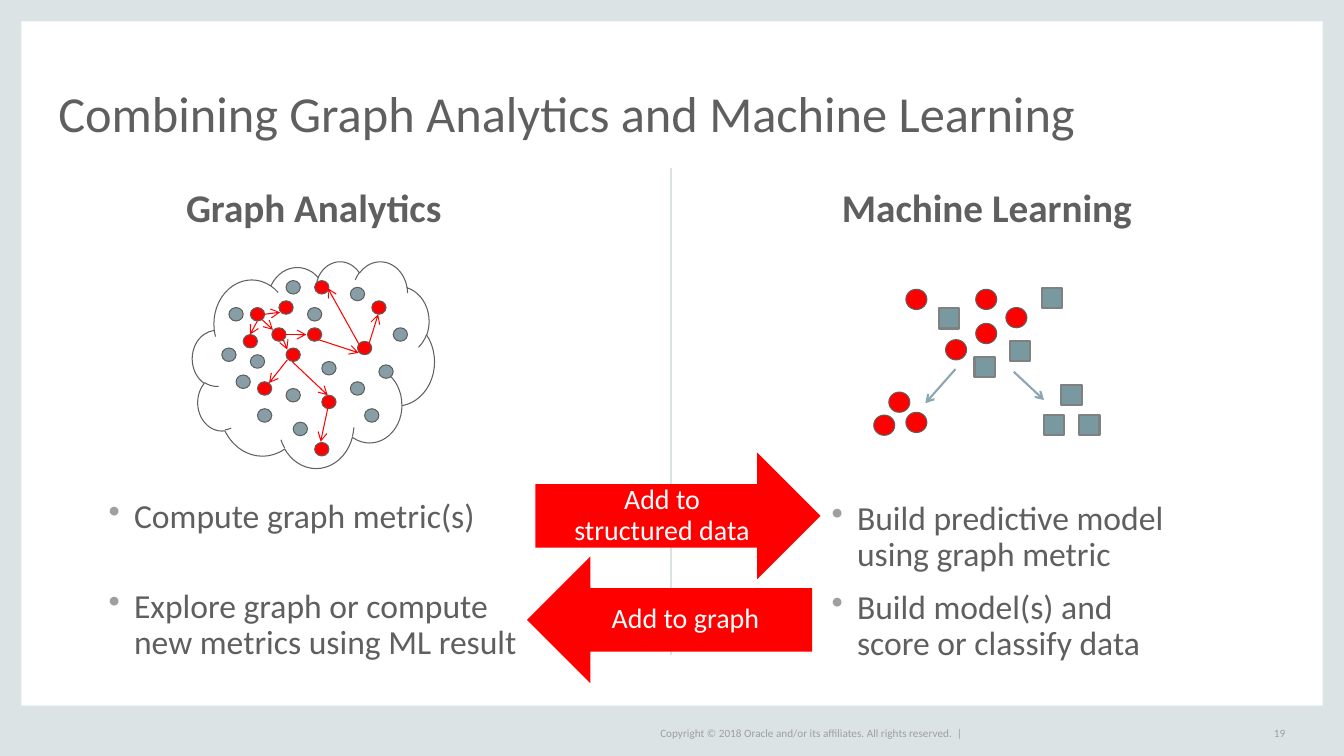
from dataclasses import dataclass

from lxml import etree
from pptx import Presentation
from pptx import util as u
from pptx.dml.color import RGBColor
from pptx.enum import shapes, text
from pptx.oxml import ns


@dataclass(frozen=True)
class Theme:
    font: str = "Calibri"
    frame: str = "DCE3E4"
    ink: str = "5F5F5F"
    muted: str = "9F9F9F"
    white: str = "FFFFFF"
    red: str = "FF0000"
    node: str = "889EA6"
    square: str = "7999A1"
    square_edge: str = "808080"
    split: str = "8DA6B1"
    title: int = 36
    heading: int = 28
    body: int = 24
    flow: int = 20
    footer: int = 8


theme = Theme()
KIND = shapes.MSO_SHAPE
ALIGN = text.PP_ALIGN
ANCHOR = text.MSO_ANCHOR


def place(kind, box, fill, edge=None, weight=0.75):
    """Add a filled shape; box is left, top, width, height in cm."""
    piece = slide.shapes.add_shape(kind, *map(u.Cm, box))
    piece.shadow.inherit = False
    piece.fill.solid()
    piece.fill.fore_color.rgb = RGBColor.from_string(fill)
    if edge:
        piece.line.color.rgb = RGBColor.from_string(edge)
        piece.line.width = u.Pt(weight)
    else:
        piece.line.fill.background()
    return piece


def write(paragraph, lines, size, colour, align=ALIGN.LEFT, spacing=0.9, bold=False):
    """Fill a paragraph with one run per line."""
    paragraph.alignment = align
    paragraph.line_spacing = spacing
    for number, line in enumerate(lines):
        if number:
            paragraph.add_line_break()
        run = paragraph.add_run()
        run.text = line
        run.font.name = theme.font
        run.font.size = u.Pt(size)
        run.font.bold = bold
        run.font.color.rgb = RGBColor.from_string(colour)


deck = Presentation()
deck.slide_width, deck.slide_height = u.Cm(33.87), u.Cm(19.05)
slide = deck.slides.add_slide(deck.slide_layouts[6])

# Frame around the slide
for bar in [(0, 0, 0.54, 19.05), (33.33, 0, 0.54, 19.05),
            (0, 17.78, 33.87, 1.27), (0, 0, 33.87, 0.54)]:
    place(KIND.RECTANGLE, bar, theme.frame)

# Title, column headings and footer
labels = [
    ("Combining Graph Analytics and Machine Learning", (1.47, 1.12, 30.91, 2.46),
     theme.title, theme.ink, ALIGN.LEFT, ANCHOR.BOTTOM, 0.8, False),
    ("Graph Analytics", (4.69, 4.24, 11.8, 2.11),
     theme.heading, theme.ink, ALIGN.LEFT, ANCHOR.MIDDLE, 0.9, True),
    ("Machine Learning", (17.35, 4.24, 15.04, 2.11),
     theme.heading, theme.ink, ALIGN.CENTER, ANCHOR.MIDDLE, 0.9, True),
    ("Copyright © 2018 Oracle and/or its affiliates. All rights reserved.  |",
     (16.64, 18.21, 9, 0.51),
     theme.footer, theme.muted, ALIGN.LEFT, ANCHOR.MIDDLE, 1.0, False),
    ("19", (31.32, 18.21, 1.07, 0.51),
     theme.footer, theme.muted, ALIGN.RIGHT, ANCHOR.MIDDLE, 1.0, False),
]
for words, box, size, colour, align, anchor, spacing, bold in labels:
    frame = slide.shapes.add_textbox(*map(u.Cm, box)).text_frame
    frame.word_wrap = True
    frame.vertical_anchor = anchor
    frame.margin_left = frame.margin_right = frame.margin_top = frame.margin_bottom = 0
    write(frame.paragraphs[0], [words], size, colour, align, spacing, bold)

# Bulleted steps: box, gap before the second step, steps
columns = [
    ((2.74, 12.58, 10.77, 4.5), 38.4,
     [["Compute graph metric(s)"],
      ["Explore graph or compute", "new metrics using ML result"]]),
    ((20.96, 12.63, 9.09, 4.5), 12,
     [["Build predictive model", "using graph metric"],
      ["Build model(s) and", "score or classify data"]]),
]
for box, gap, steps in columns:
    frame = slide.shapes.add_textbox(*map(u.Cm, box)).text_frame
    frame.word_wrap = True
    frame.margin_left = frame.margin_right = frame.margin_top = frame.margin_bottom = 0
    for number, step in enumerate(steps):
        paragraph = frame.add_paragraph() if number else frame.paragraphs[0]
        properties = paragraph._p.get_or_add_pPr()
        properties.set("marL", str(u.Cm(0.64)))
        properties.set("indent", str(-u.Cm(0.64)))
        bullet_colour = etree.SubElement(properties, ns.qn("a:buClr"))
        etree.SubElement(bullet_colour, ns.qn("a:srgbClr"), val=theme.muted)
        etree.SubElement(properties, ns.qn("a:buChar"), char="•")
        if number:
            paragraph.space_before = u.Pt(gap)
        write(paragraph, step, theme.body, theme.ink)

# Graph cloud: nodes sit on a fine grid of columns and rows
place(KIND.CLOUD, (4.85, 6.58, 6.1, 5.21), theme.white, theme.ink)
visited = [(4, 4), (3, 8), (7, 7), (8, 3), (9, 10), (12, 7), (13, 0),
           (5, 15), (13, 24), (14, 17), (19, 9), (21, 3)]
unvisited = [(0, 10), (4, 11), (14, 12), (12, 4), (18, 1), (24, 7), (22, 12.5), (18, 15),
             (20, 19), (10, 21), (9, 16), (5, 19), (2, 14), (1, 4), (9, 0)]
for nodes, colour in [(visited, theme.red), (unvisited, theme.node)]:
    for column, row in nodes:
        place(KIND.OVAL, (5.59 + 0.18 * column, 7.07 + 0.17 * row, 0.36, 0.34),
              colour, theme.ink)

# Samples before and after classification
squares = [(23.67, 7.77), (26.26, 7.26), (25.45, 8.59), (24.56, 8.99),
           (26.75, 9.7), (27.2, 10.46), (26.31, 10.46)]
circles = [(22.83, 7.29), (24.59, 7.29), (25.35, 7.75), (24.59, 8.15), (23.83, 8.56),
           (22.4, 9.88), (22.02, 10.46), (22.83, 10.39)]
for left, top in squares:
    place(KIND.RECTANGLE, (left, top, 0.51, 0.51), theme.square, theme.square_edge, 1.5)
for left, top in circles:
    place(KIND.OVAL, (left, top, 0.53, 0.51), theme.red, theme.ink)

# Lines: column divider, graph edges, split into classes
divider = [(16.92, 4.24, 16.92, 16.51)]
edges = [(6.48, 8.1, 6.3, 8.43), (6.6, 8.05, 6.88, 8.31), (6.65, 7.92, 7.06, 7.87),
         (7.14, 8.56, 7.24, 8.81), (7.19, 8.43, 7.72, 8.43), (7.24, 9.07, 6.78, 9.65),
         (7.37, 9.12, 8.26, 9.96), (8.03, 8.56, 9.04, 8.89), (9.3, 8.66, 9.53, 7.92),
         (9.04, 8.66, 8.26, 7.26), (8.26, 10.29, 8.08, 11.13)]
splits = [(24.08, 9.3, 23.32, 10.16), (25.55, 9.37, 26.31, 10.08)]
for group, colour, weight, pointed in [(divider, theme.frame, 1.5, False),
                                       (edges, theme.red, 0.75, True),
                                       (splits, theme.split, 1.5, True)]:
    for ends in group:
        link = slide.shapes.add_connector(shapes.MSO_CONNECTOR.STRAIGHT, *map(u.Cm, ends))
        link.line.color.rgb = RGBColor.from_string(colour)
        link.line.width = u.Pt(weight)
        if pointed:
            etree.SubElement(link.line._get_or_add_ln(), ns.qn("a:tailEnd"), type="arrow")
        etree.SubElement(link._element.spPr, ns.qn("a:effectLst"))

# Flow between the two columns
for kind, left, top, words in [
        (KIND.RIGHT_ARROW, 13.49, 11.4, ["Add to", "structured data"]),
        (KIND.LEFT_ARROW, 13.28, 14.02, ["Add to graph"])]:
    flow = place(kind, (left, top, 7.19, 3.2), theme.red)
    flow.text_frame.word_wrap = True
    flow.text_frame.vertical_anchor = ANCHOR.MIDDLE
    write(flow.text_frame.paragraphs[0], words, theme.flow, theme.white, ALIGN.CENTER)

deck.save("out.pptx")
